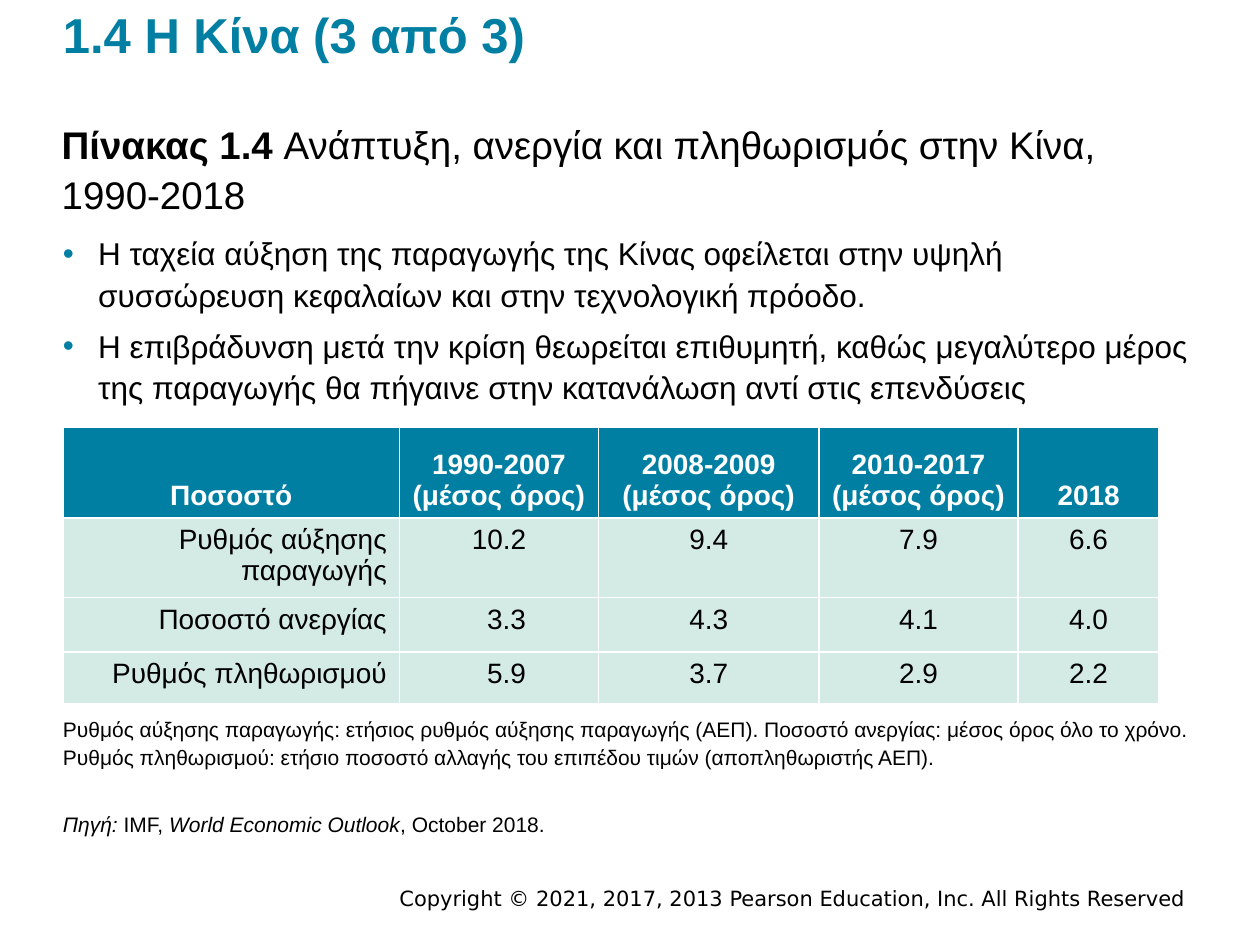
from dataclasses import dataclass, field

from lxml.etree import SubElement
from pptx import Presentation
from pptx.dml.color import RGBColor
from pptx.enum.text import MSO_ANCHOR, PP_ALIGN
from pptx.oxml.ns import qn
from pptx.util import Inches, Pt

HUES = {"teal": "007FA3", "mint": "D4EAE4", "black": "000000", "white": "FFFFFF"}
LEFT, WIDE = 0.5, 9


@dataclass
class Run:
    text: str
    form: dict = field(default_factory=dict)


@dataclass
class Box:
    area: tuple
    paras: list
    size: int
    hue: str = "black"
    face: str = "Arial"
    form: dict = field(default_factory=dict)
    para: dict = field(default_factory=dict)
    frame: dict = field(default_factory=dict)
    inset: float = 0
    gap: float = 0
    dots: bool = False


def tint(name: str) -> RGBColor:
    return RGBColor.from_string(HUES[name])


def apply(item, form: dict) -> None:
    for key, value in form.items():
        setattr(item, key, value)


def add_run(para, run: Run, size: int, hue: str, face: str, form: dict) -> None:
    part = para.add_run()
    part.text = run.text
    apply(part.font, {"size": Pt(size), "name": face, **form, **run.form})
    part.font.color.rgb = tint(hue)


def add_dot(para) -> None:
    props = para._p.get_or_add_pPr()
    props.set("marL", str(Inches(0.28)))
    props.set("indent", str(-Inches(0.28)))
    color = SubElement(props, qn("a:buClr"))
    SubElement(color, qn("a:srgbClr"), val=HUES["teal"])
    SubElement(props, qn("a:buFont"), typeface="Arial")
    SubElement(props, qn("a:buChar"), char="•")


def add_box(slide, box: Box) -> None:
    frame = slide.shapes.add_textbox(*map(Inches, box.area)).text_frame
    sides = ("left", "right", "top", "bottom")
    margins = {f"margin_{side}": Inches(box.inset) for side in sides}
    apply(frame, {"word_wrap": True, **margins, **box.frame})
    for spot, runs in enumerate(box.paras):
        para = frame.add_paragraph() if spot else frame.paragraphs[0]
        if box.dots:
            add_dot(para)
        apply(para, box.para)
        if spot:
            para.space_before = Pt(box.gap)
        for run in runs:
            add_run(para, run, box.size, box.hue, box.face, box.form)


def fill_cell(cell, text: str, head: bool, align: PP_ALIGN) -> None:
    cell.fill.solid()
    cell.fill.fore_color.rgb = tint("teal" if head else "mint")
    cell.vertical_anchor = MSO_ANCHOR.BOTTOM if head else MSO_ANCHOR.TOP
    for spot, line in enumerate(text.split("\n")):
        frame = cell.text_frame
        para = frame.add_paragraph() if spot else frame.paragraphs[0]
        para.alignment = align
        hue = "white" if head else "black"
        add_run(para, Run(line), 16, hue, "Arial", {"bold": head})


def add_grid(slide, rows: list, widths: list, heights: list) -> None:
    area = (LEFT, 3.39, sum(widths), sum(heights))
    table = slide.shapes.add_table(len(rows), len(widths), *map(Inches, area)).table
    for column, width in zip(table.columns, widths):
        column.width = Inches(width)
    for row, height in zip(table.rows, heights):
        row.height = Inches(height)
    for y, row in enumerate(rows):
        for x, text in enumerate(row):
            cell = table.cell(y, x)
            align = PP_ALIGN.RIGHT if y and not x else PP_ALIGN.CENTER
            fill_cell(cell, text, y == 0, align)
            if x == 1 and len(text) == 3:
                cell.margin_left = Inches(0.22)


BODY = {"line_spacing": 1.1}
SLANT = {"italic": True}
MEAN = "\n(μέσος όρος)"
ROWS = [
    ["Ποσοστό", *(span + MEAN for span in ("1990-2007", "2008-2009", "2010-2017")), "2018"],
    ["Ρυθμός αύξησης παραγωγής", "10.2", "9.4", "7.9", "6.6"],
    ["Ποσοστό ανεργίας", "3.3", "4.3", "4.1", "4.0"],
    ["Ρυθμός πληθωρισμού", "5.9", "3.7", "2.9", "2.2"],
]
BOXES = [
    Box((1.68, 6.98, 7.83, 0.3),
        [[Run("Copyright © 2021, 2017, 2013 Pearson Education, Inc. All Rights Reserved")]],
        12, face="DejaVu Sans", para={"alignment": PP_ALIGN.RIGHT},
        frame={"margin_top": Inches(0.05)}, inset=0.1),
    Box((LEFT, 0, WIDE, 0.5), [[Run("1.4 Η Κίνα (3 από 3)")]], 28, "teal",
        form={"bold": True}, frame={"vertical_anchor": MSO_ANCHOR.BOTTOM}),
    Box((LEFT, 1.83, WIDE, 1.49), [
        [Run("Η ταχεία αύξηση της παραγωγής της Κίνας οφείλεται στην υψηλή "
             "συσσώρευση κεφαλαίων και στην τεχνολογική πρόοδο.")],
        [Run("Η επιβράδυνση μετά την κρίση θεωρείται επιθυμητή, καθώς μεγαλύτερο "
             "μέρος της παραγωγής θα πήγαινε στην κατανάλωση αντί στις επενδύσεις")],
    ], 18, para=BODY, gap=5.2, dots=True),
    Box((0.49, 0.92, WIDE, 0.51), [[
        Run("Πίνακας 1.4 ", {"bold": True}),
        Run("Ανάπτυξη, ανεργία και πληθωρισμός στην Κίνα, 1990-2018"),
    ]], 22, para=BODY),
    Box((LEFT, 5.67, WIDE, 0.55), [[
        Run("Ρυθμός αύξησης παραγωγής: ετήσιος ρυθμός αύξησης παραγωγής (ΑΕΠ). "
            "Ποσοστό ανεργίας: μέσος όρος όλο το χρόνο. Ρυθμός πληθωρισμού: ετήσιο "
            "ποσοστό αλλαγής του επιπέδου τιμών (αποπληθωριστής ΑΕΠ)."),
    ]], 12, para=BODY),
    Box((LEFT, 6.42, WIDE, 0.25), [[
        Run("Πηγή: ", SLANT), Run("IMF, "),
        Run("World Economic Outlook", SLANT), Run(", October 2018."),
    ]], 12, para=BODY),
]


def main() -> None:
    """Build the slide on growth, jobs and prices in China."""
    deck = Presentation()
    apply(deck, {"slide_width": Inches(10), "slide_height": Inches(7.5)})
    slide = deck.slides.add_slide(deck.slide_layouts[6])
    for box in BOXES[:4]:
        add_box(slide, box)
    add_grid(slide, ROWS, [2.67, 1.58, 1.75, 1.58, 1.12], [0.72, 0.45, 0.43, 0.41])
    for box in BOXES[4:]:
        add_box(slide, box)
    deck.save("out.pptx")


if __name__ == "__main__":
    main()
